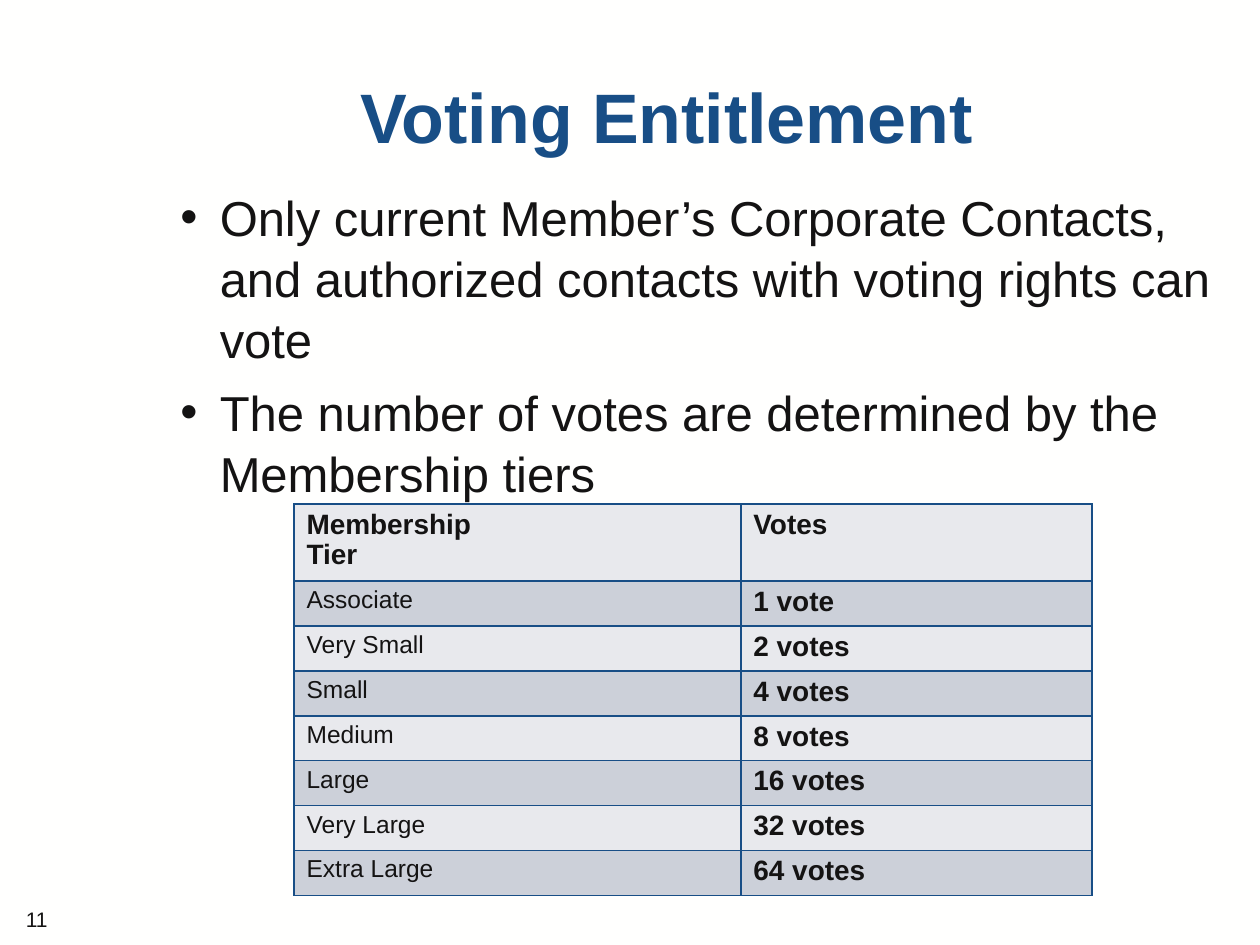
from lxml import etree
from pptx import Presentation
from pptx.dml.color import RGBColor
from pptx.enum.text import MSO_ANCHOR, PP_ALIGN
from pptx.oxml.ns import qn
from pptx.util import Pt

MIDDLE = MSO_ANCHOR.MIDDLE
CENTER = PP_ALIGN.CENTER
FONT = "Arial"
COLORS = {"back": "FFFFFE", "blue": "184E86", "ink": "141313",
          "light": "E8E9ED", "dark": "CCD0D9"}
POINTS = [
    "Only current Member’s Corporate Contacts, and authorized contacts "
    "with voting rights can vote",
    "The number of votes are determined by the Membership tiers",
]
ROWS = [
    ("Membership\nTier", "Votes"),
    ("Associate", "1 vote"),
    ("Very Small", "2 votes"),
    ("Small", "4 votes"),
    ("Medium", "8 votes"),
    ("Large", "16 votes"),
    ("Very Large", "32 votes"),
    ("Extra Large", "64 votes"),
]


def rgb(name):
    """Return the named colour."""
    return RGBColor.from_string(COLORS[name])


def style(frame, size, color="ink", bold=False):
    """Format every run in a text frame."""
    for para in frame.paragraphs:
        for run in para.runs:
            font = run.font
            font.name, font.size, font.bold = FONT, Pt(size), bold
            font.color.rgb = rgb(color)


def add_text(slide, box, text):
    """Add a wrapped text box and return its frame."""
    frame = slide.shapes.add_textbox(*map(Pt, box)).text_frame
    frame.word_wrap = True
    frame.text = text
    return frame


def add_label(slide, box, text, size, color="ink", bold=False):
    """Add one centred line of text."""
    frame = add_text(slide, box, text)
    frame.vertical_anchor = MIDDLE
    frame.paragraphs[0].alignment = CENTER
    style(frame, size, color, bold)


def add_list(slide, box, items):
    """Add a bulleted list."""
    frame = add_text(slide, box, "\n".join(items))
    for i, para in enumerate(frame.paragraphs):
        props = para._p.get_or_add_pPr()
        props.set("marL", str(Pt(58.5)))
        props.set("indent", str(Pt(-22.5)))
        para.line_spacing = 1.04
        if i:
            para.space_before = Pt(6.6)
        etree.SubElement(props, qn("a:buFont"), typeface=FONT)
        etree.SubElement(props, qn("a:buChar"), char="•")
    style(frame, 28)


def add_edges(cell):
    """Draw the four borders of a cell."""
    props = cell._tc.get_or_add_tcPr()
    for i, side in enumerate(("lnL", "lnR", "lnT", "lnB")):
        line = etree.Element(qn(f"a:{side}"), w=str(Pt(1)))
        fill = etree.SubElement(line, qn("a:solidFill"))
        etree.SubElement(fill, qn("a:srgbClr"), val=COLORS["blue"])
        props.insert(i, line)


def add_grid(slide, box, rows):
    """Add the table of votes for each tier."""
    grid = slide.shapes.add_table(len(rows), 2, *map(Pt, box)).table
    for col, share in zip(grid.columns, (0.56, 0.44)):
        col.width = Pt(round(box[2] * share, 2))
    for r, row in enumerate(rows):
        grid.rows[r].height = Pt(25 if r else 43)
        for c, text in enumerate(row):
            cell = grid.cell(r, c)
            cell.text = text
            cell.fill.solid()
            cell.fill.fore_color.rgb = rgb("dark" if r % 2 else "light")
            for para in cell.text_frame.paragraphs:
                para.line_spacing = 0.96
            plain = r > 0 and c == 0
            style(cell.text_frame, 14 if plain else 16, bold=not plain)
            add_edges(cell)


def main():
    """Build and save the slide."""
    deck = Presentation()
    deck.slide_width, deck.slide_height = Pt(720), Pt(540)
    slide = deck.slides.add_slide(deck.slide_layouts[6])
    slide.background.fill.solid()
    slide.background.fill.fore_color.rgb = rgb("back")
    add_label(slide, (66, 30, 630, 72), "Voting Entitlement", 40, "blue", True)
    add_list(slide, (60, 102, 642, 420), POINTS)
    add_label(slide, (0, 510, 42, 30), "11", 12)
    add_grid(slide, (168, 288, 456, 218), ROWS)
    deck.save("out.pptx")


if __name__ == "__main__":
    main()
